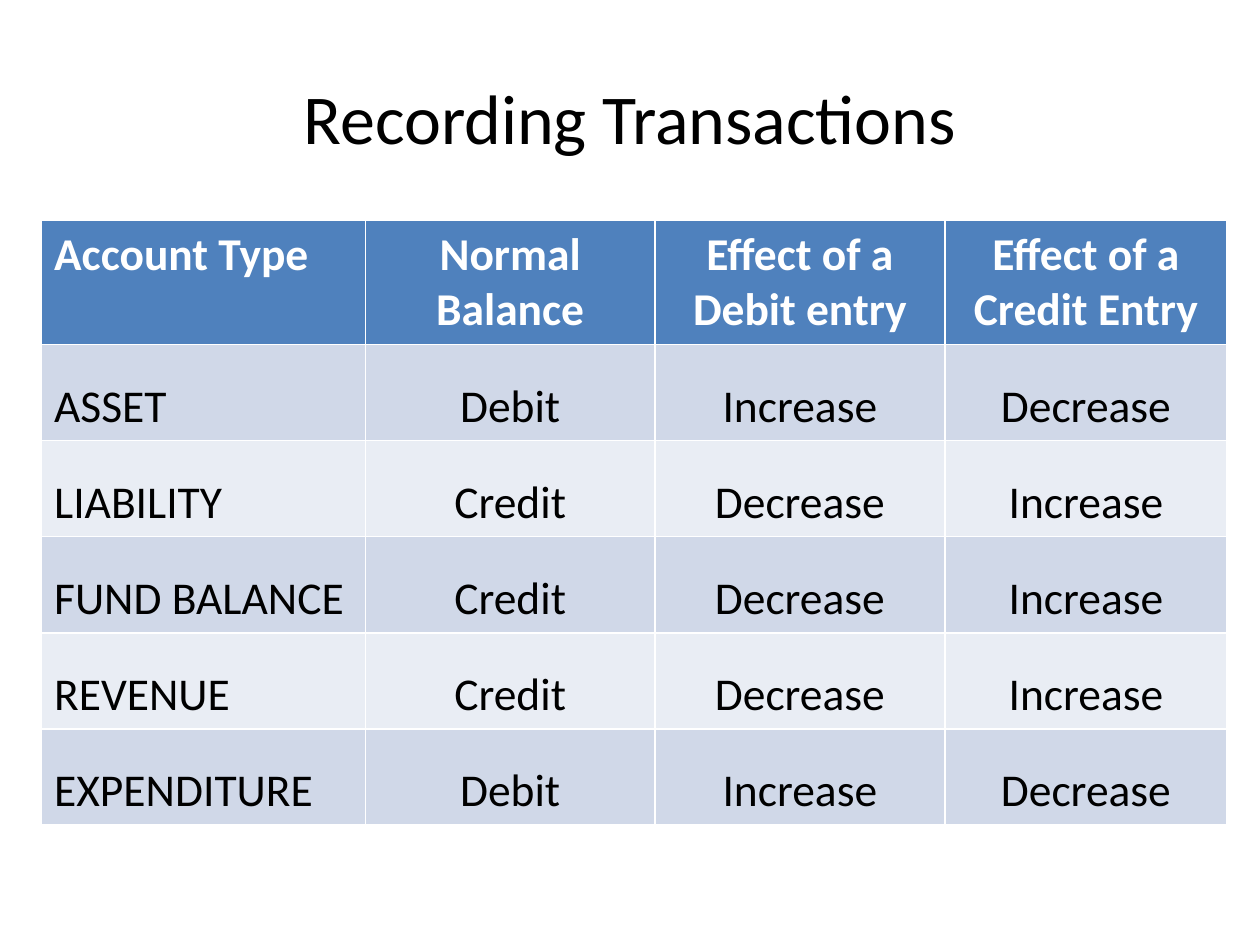
"""Build a slide with a table of debit and credit effects by account type."""
from pptx import Presentation
from pptx.dml.color import RGBColor
from pptx.enum.text import MSO_ANCHOR, PP_ALIGN
from pptx.util import Inches, Pt

LEFT, CENTER = PP_ALIGN.LEFT, PP_ALIGN.CENTER
MIDDLE = MSO_ANCHOR.MIDDLE
TITLE_ONLY = 5
BLACK = RGBColor(0x00, 0x00, 0x00)
WHITE = RGBColor(0xFF, 0xFF, 0xFF)
HEADER_BLUE = RGBColor(0x4F, 0x81, 0xBD)
BANDS = (RGBColor(0xD0, 0xD8, 0xE8), RGBColor(0xE9, 0xED, 0xF4))

HEADINGS = ("Account Type", "Normal Balance", "Effect of a Debit entry", "Effect of a Credit Entry")
NORMAL_BALANCES = {
    "ASSET": "Debit",
    "LIABILITY": "Credit",
    "FUND BALANCE": "Credit",
    "REVENUE": "Credit",
    "EXPENDITURE": "Debit",
}
EFFECTS = {"Debit": ("Increase", "Decrease"), "Credit": ("Decrease", "Increase")}
COLUMN_WIDTHS = (2.57, 2.3, 2.3, 2.24)
HEADER_HEIGHT, ENTRY_HEIGHT = 0.98, 0.76
ENTRY_SPACING = {"line_spacing": 1.5, "space_before": Pt(6), "space_after": Pt(6)}


def format_paragraph(paragraph, size, color, bold=False, **layout):
    """Apply font and paragraph settings."""
    font = paragraph.font
    for name, value in {"name": "Calibri", "size": Pt(size), "bold": bold}.items():
        setattr(font, name, value)
    font.color.rgb = color
    for name, value in layout.items():
        setattr(paragraph, name, value)


def add_title(slide, text):
    """Fill and place the title placeholder."""
    title = slide.shapes.title
    box = {"left": 0.5, "top": 0.3, "width": 9, "height": 1.25}
    for name, value in box.items():
        setattr(title, name, Inches(value))
    title.text_frame.text = text
    title.text_frame.vertical_anchor = MIDDLE
    format_paragraph(title.text_frame.paragraphs[0], 40, BLACK, alignment=CENTER)


def fill_row(row, texts, fill, color, **style):
    """Write one table row with the first column aligned left."""
    for column, (cell, text) in enumerate(zip(row.cells, texts)):
        cell.text = text
        cell.fill.solid()
        cell.fill.fore_color.rgb = fill
        alignment = CENTER if column else LEFT
        format_paragraph(cell.text_frame.paragraphs[0], 26, color, alignment=alignment, **style)


def add_effects_table(slide):
    """Add the heading row and one banded row per account type."""
    height = HEADER_HEIGHT + ENTRY_HEIGHT * len(NORMAL_BALANCES)
    table = slide.shapes.add_table(
        len(NORMAL_BALANCES) + 1, len(HEADINGS),
        Inches(0.33), Inches(1.75), Inches(sum(COLUMN_WIDTHS)), Inches(height),
    ).table
    for column, width in zip(table.columns, COLUMN_WIDTHS):
        column.width = Inches(width)
    header, *entries = table.rows
    header.height = Inches(HEADER_HEIGHT)
    fill_row(header, HEADINGS, HEADER_BLUE, WHITE, bold=True)
    for index, (row, (account, balance)) in enumerate(zip(entries, NORMAL_BALANCES.items())):
        row.height = Inches(ENTRY_HEIGHT)
        texts = (account, balance, *EFFECTS[balance])
        fill_row(row, texts, BANDS[index % 2], BLACK, **ENTRY_SPACING)


def main():
    """Create and save the presentation."""
    presentation = Presentation()
    presentation.slide_width, presentation.slide_height = Inches(10), Inches(7.5)
    slide = presentation.slides.add_slide(presentation.slide_layouts[TITLE_ONLY])
    add_title(slide, "Recording Transactions")
    add_effects_table(slide)
    presentation.save("out.pptx")


if __name__ == "__main__":
    main()
